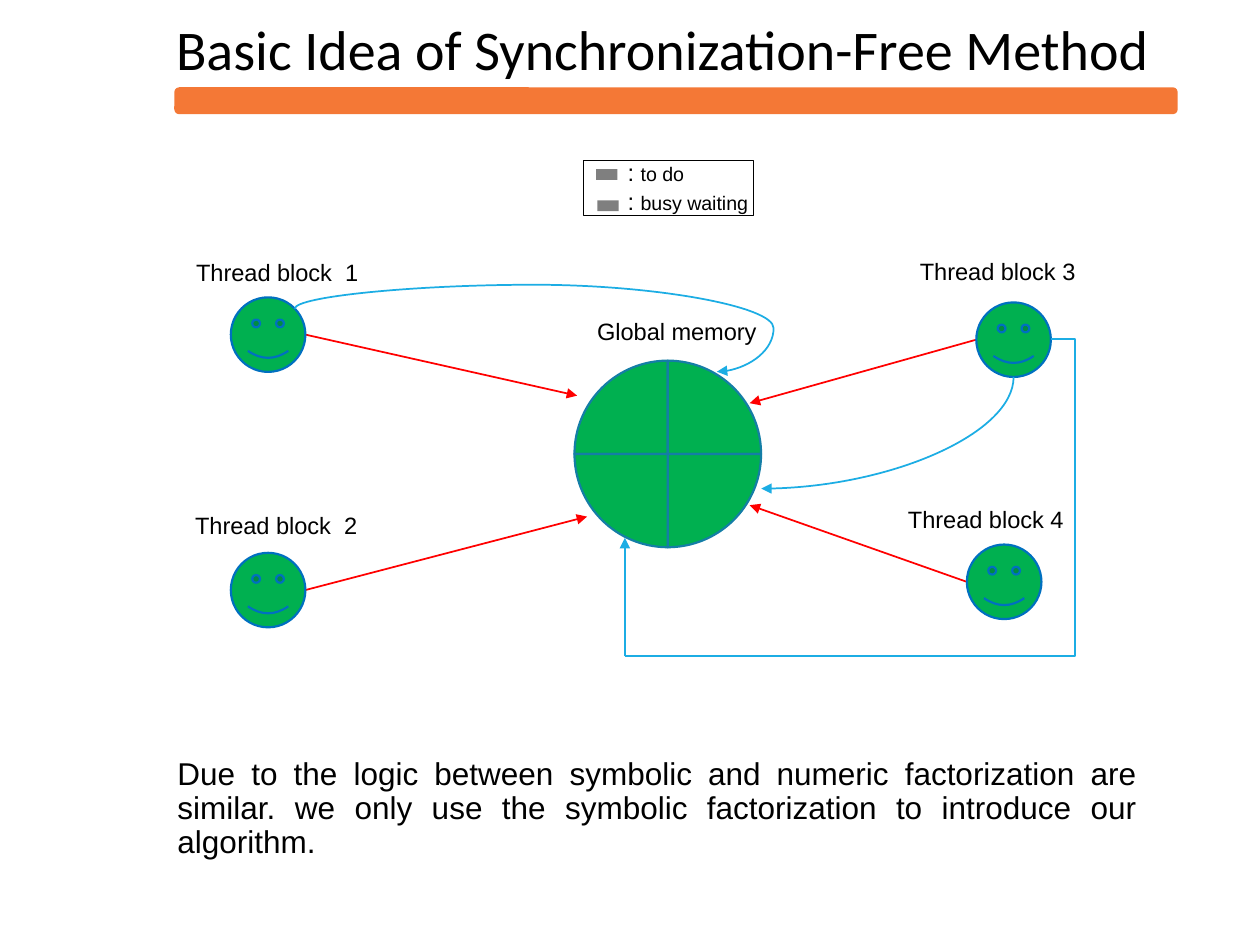
import pptx
import pptx.util
import pptx.dml.color
import pptx.enum.shapes
import pptx.enum.text
import pptx.oxml
import pptx.oxml.ns

Pt = pptx.util.Pt
SHAPE = pptx.enum.shapes.MSO_SHAPE
ANCHOR = pptx.enum.text.MSO_ANCHOR
ALIGN = pptx.enum.text.PP_ALIGN
qn = pptx.oxml.ns.qn

COLORS = {
    "text": "000000", "bar": "F47836", "green": "00B050", "face": "0070C0",
    "memory": "147EA6", "red": "FF0000", "curve": "1CADE4", "gray": "7F7F7F",
}

TITLE = "Basic Idea of Synchronization-Free Method"
NOTE = ("Due to the logic between symbolic and numeric factorization are similar. "
        "we only use the symbolic factorization to introduce our algorithm.")
LEGEND = ["to do", "busy waiting"]
LEGEND_KEYS = [(340.7, 96.6), (341.4, 114.5)]

FACE = 42.6
MEMORY = {"center": (381.6, 259.4), "radius": 53.3}

# label, label box (left, top, width), face (left, top), side the arrow leaves, arrow end
BLOCKS = [
    ("Thread block  1", (109.4, 144.9, 99.4), (131.9, 169.9), "right", (329.8, 226.1)),
    ("Thread block  2", (108.8, 289.4, 99.4), (131.9, 315.9), "right", (335.5, 295.2)),
    ("Thread block 3", (523, 144.4, 95.8), (557.9, 172.8), "left", (428.4, 230.4)),
    ("Thread block 4", (516.2, 286.1, 95.8), (552.5, 311.2), "left", (428.4, 288.7)),
]
MEMORY_LABEL = ("Global memory", (338.6, 178.7, 97.9))

# start point, then two control points and an end point per curve
CURVES = [
    [(168.5, 176.4), (168.5, 169.5), (236.9, 162.7), (305.3, 162.7),
     (373.7, 162.7), (442.1, 175), (442.1, 187.5), (442.1, 200), (425.5, 212.4), (409.7, 212.4)],
    [(579.2, 215.4), (579.2, 247.3), (507.1, 279.2), (435, 279.2)],
]
ROUTE = [(600.5, 193.9), (614.2, 193.9), (614.2, 375.1), (357.1, 375.1)]
ROUTE_END = (357.1, 307.4)

prs = pptx.Presentation()
prs.slide_width, prs.slide_height = Pt(720), Pt(540)
s = prs.slides.add_slide(prs.slide_layouts[5])


def rgb(name):
    return pptx.dml.color.RGBColor.from_string(COLORS[name])


def points(*values):
    return [Pt(round(v, 2)) for v in values]


def style(sp, fill=None, line=None, width=1):
    sp.shadow.inherit = False
    if fill:
        sp.fill.solid()
        sp.fill.fore_color.rgb = rgb(fill)
    else:
        sp.fill.background()
    if line:
        sp.line.color.rgb = rgb(line)
        sp.line.width = Pt(width)
    else:
        sp.line.fill.background()


def add_shape(kind, box, **look):
    sp = s.shapes.add_shape(kind, *points(*box))
    style(sp, **look)
    return sp


def set_font(font, size, name="Arial"):
    font.size, font.name = Pt(size), name
    font.color.rgb = rgb("text")


def set_frame(tf, margin_x, margin_y, wrap=True, anchor=ANCHOR.TOP):
    tf.margin_left = tf.margin_right = Pt(margin_x)
    tf.margin_top = tf.margin_bottom = Pt(margin_y)
    tf.word_wrap, tf.vertical_anchor = wrap, anchor


def add_label(text, box):
    tf = s.shapes.add_textbox(*points(*box, 21.6)).text_frame
    set_frame(tf, 2.7, 2.7, wrap=False)
    tf.text = text
    set_font(tf.paragraphs[0].font, 13.5)


def add_arrowhead(sp):
    ln = sp.line._get_or_add_ln()
    ln.append(pptx.oxml.parse_xml(
        f'<a:tailEnd {pptx.oxml.ns.nsdecls("a")} type="triangle"/>'))


def add_arrow(start, end, color):
    sp = s.shapes.add_connector(
        pptx.enum.shapes.MSO_CONNECTOR.STRAIGHT, *points(*start, *end))
    sp.line.color.rgb = rgb(color)
    sp.line.width = Pt(1)
    add_arrowhead(sp)
    sp._element.spPr.append(pptx.oxml.parse_xml(
        f'<a:effectLst {pptx.oxml.ns.nsdecls("a")}/>'))


def add_route(vertices):
    builder = s.shapes.build_freeform(*points(*vertices[0]), scale=1.0)
    builder.add_line_segments([points(*v) for v in vertices[1:]], close=False)
    sp = builder.convert_to_shape()
    style(sp, line="curve")
    return sp


def add_curve(vertices):
    """Draw a route, then turn each three line segments into one Bezier segment."""
    sp = add_route(vertices)
    segments = list(sp._element.iter(qn("a:lnTo")))
    for i in range(0, len(segments), 3):
        bezier = pptx.oxml.parse_xml(f'<a:cubicBezTo {pptx.oxml.ns.nsdecls("a")}/>')
        segments[i].addprevious(bezier)
        for segment in segments[i:i + 3]:
            bezier.append(segment[0])
            segment.getparent().remove(segment)
    add_arrowhead(sp)


# Title and bar
bar = add_shape(SHAPE.ROUNDED_RECTANGLE, (100.1, 50.4, 572.4, 14.4), fill="bar", line="bar")
bar.adjustments[0] = 0.167
title = s.shapes.title
title.left, title.top, title.width, title.height = points(97.9, 4.3, 587.5, 46.1)
set_frame(title.text_frame, 2.7, 3.6, anchor=ANCHOR.MIDDLE)
title.text_frame.text = TITLE
p = title.text_frame.paragraphs[0]
p.alignment = ALIGN.LEFT
set_font(p.font, 32, "Calibri")

# Global memory in four quarters, clockwise from the upper left
(cx, cy), radius = MEMORY["center"], MEMORY["radius"]
for i, (dx, dy) in enumerate([(-1, -1), (0, -1), (0, 0), (-1, 0)]):
    quarter = add_shape(SHAPE.PIE_WEDGE, (cx + dx * radius, cy + dy * radius, radius, radius),
                        fill="green", line="memory", width=1.25)
    quarter.rotation = 90 * i
add_label(*MEMORY_LABEL)

# Thread blocks and their arrows to memory
for label, label_box, (x, y), side, end in BLOCKS:
    add_label(label, label_box)
    add_arrow((x + FACE * (side == "right"), y + FACE / 2), end, "red")
    add_shape(SHAPE.SMILEY_FACE, (x, y, FACE, FACE), fill="green", line="face", width=1.25)

for curve in CURVES:
    add_curve(curve)
add_route(ROUTE)
add_arrow(ROUTE[-1], ROUTE_END, "curve")

# Legend
legend = add_shape(SHAPE.RECTANGLE, (333.4, 91.6, 96.8, 31.4), line="text", width=0.25)
tf = legend.text_frame
set_frame(tf, 0, 0)
for i, text in enumerate(LEGEND):
    p = tf.paragraphs[0] if i == 0 else tf.add_paragraph()
    p._p.get_or_add_pPr().set("indent", str(Pt(25.2)))
    p.alignment = ALIGN.LEFT
    if i == 0:
        p.line_spacing = Pt(15)
    for part, size in [(": ", 13.5), (text, 11.2)]:
        r = p.add_run()
        r.text = part
        set_font(r.font, size)
for x, y in LEGEND_KEYS:
    add_shape(SHAPE.RECTANGLE, (x, y, 12.2, 6.2), fill="gray")

# Note
tf = s.shapes.add_textbox(*points(94.3, 429.8, 562.3, 66.2)).text_frame
set_frame(tf, 7.2, 3.6)
tf.text = NOTE
p = tf.paragraphs[0]
p.alignment, p.line_spacing = ALIGN.JUSTIFY, 0.9
set_font(p.font, 18)

prs.save("out.pptx")
